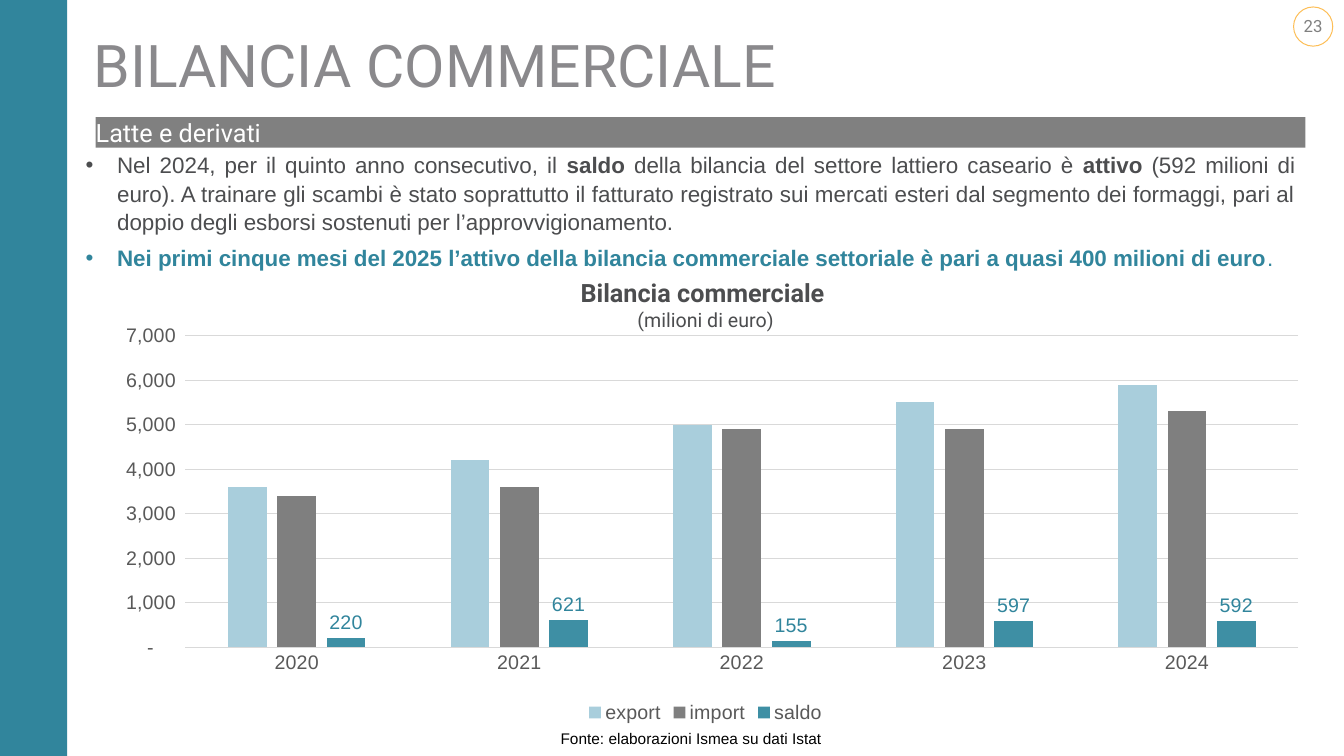
from lxml import etree
from pptx import Presentation
from pptx.chart.data import CategoryChartData
from pptx.dml.color import RGBColor
from pptx.enum.chart import XL_CHART_TYPE as ChartType, XL_LABEL_POSITION as LabelPosition
from pptx.enum.chart import XL_LEGEND_POSITION as LegendPosition, XL_TICK_MARK as TickMark
from pptx.enum.shapes import MSO_SHAPE as Preset
from pptx.enum.text import MSO_ANCHOR as Anchor, PP_ALIGN as Align
from pptx.oxml import parse_xml
from pptx.oxml.ns import nsdecls, qn
from pptx.util import Pt

COLORS = {
    "teal": "31859C", "gray": "808080", "title": "8A898C", "text": "4C4D4F",
    "ring": "FDBE56", "white": "FFFFFF", "black": "000000", "axis": "595959",
    "grid": "D9D9D9", "export": "A9CEDC", "import": "7F7F7F", "saldo": "3E8FA4",
}


def color(name):
    return RGBColor.from_string(COLORS[name])


def set_font(font, **format_values):
    """Set font attributes; size is in points and color is a key of COLORS."""
    font.color.rgb = color(format_values.pop("color"))
    font.size = Pt(format_values.pop("size"))
    for attribute, value in format_values.items():
        setattr(font, attribute, value)


presentation = Presentation()
presentation.slide_width, presentation.slide_height = Pt(960), Pt(540)
slide = presentation.slides.add_slide(presentation.slide_layouts[6])

# Preset shapes: kind, box, fill, line
shapes = {}
for name, preset, box, fill, line in [
    ("sidebar", Preset.RECTANGLE, (0, 0, 48, 540), "teal", None),
    ("page ring", Preset.OVAL, (924, 5, 28, 28), None, "ring"),
    ("subtitle bar", Preset.RECTANGLE, (68.4, 83.6, 864, 21.8), "gray", None),
    ("source", Preset.RECTANGLE, (337.7, 515, 312, 25), "white", None),
]:
    shape = slide.shapes.add_shape(preset, *map(Pt, box))
    shape.shadow.inherit = False
    if fill:
        shape.fill.solid()
        shape.fill.fore_color.rgb = color(fill)
    else:
        shape.fill.background()
    if line:
        shape.line.color.rgb = color(line)
        shape.line.width = Pt(0.7)
    else:
        shape.line.fill.background()
    shapes[name] = shape

for name, box in [
    ("page number", (924, 11.5, 28, 14.4)),
    ("title", (67, 20.2, 864, 52)),
    ("body", (61.2, 107.3, 864, 90)),
    ("chart title", (285.1, 198, 437.8, 39)),
]:
    shapes[name] = slide.shapes.add_textbox(*map(Pt, box))

# Text: each paragraph is a list of (text, bold) runs with one size and color
body_intro = [
    ("Nel 2024, per il quinto anno consecutivo, il ", False), ("saldo", True),
    (" della bilancia del settore lattiero caseario è ", False), ("attivo", True),
    (" (592 milioni di euro). A trainare gli scambi è stato soprattutto il fatturato registrato "
     "sui mercati esteri dal segmento dei formaggi, pari al doppio degli esborsi sostenuti per "
     "l’approvvigionamento.", False),
]
body_outlook = [
    ("Nei primi cinque mesi del 2025 l’attivo della bilancia commerciale settoriale è pari a "
     "quasi 400 milioni di euro", True), (".", False),
]
for name, font_name, alignment, anchor, paragraphs in [
    ("page number", "Roboto", Align.CENTER, Anchor.MIDDLE, [(12, "gray", [("23", False)])]),
    ("title", "Roboto", Align.LEFT, Anchor.TOP,
     [(42, "title", [("BILANCIA COMMERCIALE", False)])]),
    ("subtitle bar", "Roboto", Align.LEFT, Anchor.TOP,
     [(18, "white", [("Latte e derivati", False)])]),
    ("body", "Arial", Align.JUSTIFY, Anchor.TOP,
     [(16, "text", body_intro), (16, "teal", body_outlook)]),
    ("chart title", "Roboto", Align.CENTER, Anchor.TOP,
     [(18, "text", [("Bilancia commerciale ", True)]),
      (14, "text", [("(milioni di euro)", False)])]),
    ("source", "Arial", Align.CENTER, Anchor.MIDDLE,
     [(11, "black", [("Fonte: elaborazioni Ismea su dati Istat", False)])]),
]:
    frame = shapes[name].text_frame
    frame.word_wrap = True
    frame.vertical_anchor = anchor
    frame.margin_left = frame.margin_right = frame.margin_top = frame.margin_bottom = 0
    for index, (size, color_name, runs) in enumerate(paragraphs):
        paragraph = frame.add_paragraph() if index else frame.paragraphs[0]
        paragraph.alignment = alignment
        if name == "body":
            paragraph.line_spacing = 1.05
            paragraph.space_before = Pt(6 if index else 0)
            properties = paragraph._p.get_or_add_pPr()
            properties.set("marL", str(Pt(22.5)))
            properties.set("indent", str(-Pt(22.5)))
            etree.SubElement(properties, qn("a:buFont")).set("typeface", "Arial")
            etree.SubElement(properties, qn("a:buChar")).set("char", "•")
        for text, bold in runs:
            run = paragraph.add_run()
            run.text = text
            set_font(run.font, name=font_name, size=size, color=color_name, bold=bold)

# Trade balance chart
chart_data = CategoryChartData(number_format="#,##0")
chart_data.categories = ["2020", "2021", "2022", "2023", "2024"]
for name, values in {
    "export": (3600, 4200, 5000, 5500, 5900),
    "import": (3400, 3600, 4900, 4900, 5300),
    "saldo": (220, 621, 155, 597, 592),
}.items():
    chart_data.add_series(name, values)
chart = slide.shapes.add_chart(
    ChartType.COLUMN_CLUSTERED, Pt(72), Pt(201.6), Pt(864), Pt(318.2), chart_data).chart
chart.has_title = False
set_font(chart.font, name="Arial", size=14, color="axis")
chart.has_legend = True
chart.legend.position = LegendPosition.BOTTOM
chart.legend.include_in_layout = False
set_font(chart.legend.font, name="Arial", size=14, color="axis")

plot = chart.plots[0]
plot.vary_by_categories = False
plot.gap_width, plot.overlap = 219, -27
for series in plot.series:
    series.format.fill.solid()
    series.format.fill.fore_color.rgb = color(series.name)
labels = plot.series[2].data_labels
labels.show_value = True
labels.position = LabelPosition.OUTSIDE_END
set_font(labels.font, name="Arial", size=14, color="teal")

category_axis, value_axis = chart.category_axis, chart.value_axis
for axis in (category_axis, value_axis):
    axis.major_tick_mark = axis.minor_tick_mark = TickMark.NONE
    set_font(axis.tick_labels.font, name="Arial", size=14, color="axis")
value_axis.minimum_scale, value_axis.maximum_scale, value_axis.major_unit = 0, 7000, 1000
value_axis.tick_labels.number_format = '_-* #,##0_-;\\-* #,##0_-;_-* "-"??_-;_-@_'
value_axis.tick_labels.number_format_is_linked = False
value_axis.format.line.fill.background()
for line in (category_axis.format.line, value_axis.major_gridlines.format.line):
    line.color.rgb = color("grid")
    line.width = Pt(0.75)

plot_area = chart._chartSpace.chart.plotArea
for layout in plot_area.findall(qn("c:layout")):
    plot_area.remove(layout)
plot_area.insert(0, parse_xml(
    f'<c:layout {nsdecls("c")}><c:manualLayout><c:layoutTarget val="inner"/>'
    '<c:xMode val="edge"/><c:yMode val="edge"/><c:x val="0.07"/><c:y val="0.12"/>'
    '<c:w val="0.92"/><c:h val="0.7"/></c:manualLayout></c:layout>'))

presentation.save("out.pptx")
